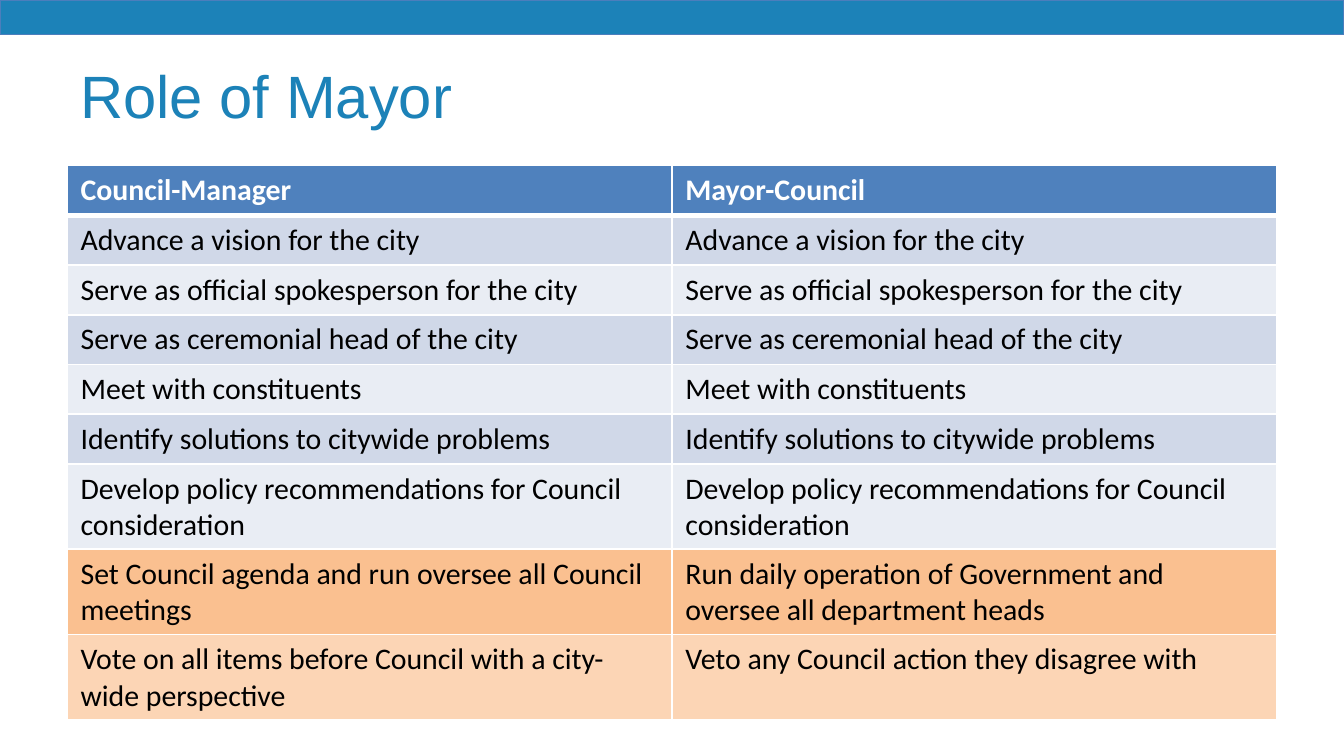
from lxml.etree import SubElement
from pptx import Presentation
from pptx.dml.color import RGBColor
from pptx.enum.shapes import MSO_SHAPE
from pptx.enum.text import MSO_ANCHOR
from pptx.oxml.ns import qn
from pptx.util import Cm, Pt

WHITE = RGBColor(0xFF, 0xFF, 0xFF)
BLACK = RGBColor(0x00, 0x00, 0x00)
TEAL = RGBColor(0x1C, 0x82, 0xB8)
BAR_EDGE = RGBColor(0x4B, 0x7E, 0xBC)
HEADER_BLUE = RGBColor(0x4F, 0x81, 0xBD)
BAND_DARK = RGBColor(0xD0, 0xD8, 0xE8)
BAND_LIGHT = RGBColor(0xE9, 0xED, 0xF4)
ORANGE_DARK = RGBColor(0xFA, 0xC0, 0x90)
ORANGE_LIGHT = RGBColor(0xFC, 0xD5, 0xB5)

HEADINGS = ("Council-Manager", "Mayor-Council")
SHARED_ROLES = (
    "Advance a vision for the city",
    "Serve as official spokesperson for the city",
    "Serve as ceremonial head of the city",
    "Meet with constituents",
    "Identify solutions to citywide problems",
    "Develop policy recommendations for Council consideration",
)
DIFFERING_ROLES = (
    ("Set Council agenda and run oversee all Council meetings",
     "Run daily operation of Government and oversee all department heads"),
    ("Vote on all items before Council with a city-wide perspective",
     "Veto any Council action they disagree with"),
)
SINGLE_LINE_ROWS = 6
SINGLE_LINE_HEIGHT = Cm(0.94)
DOUBLE_LINE_HEIGHT = Cm(1.61)


def add_text(paragraph, text, font_name, size, color, bold=False):
    run = paragraph.add_run()
    run.text = text
    run.font.name = font_name
    run.font.size = Pt(size)
    run.font.bold = bold
    run.font.color.rgb = color


def add_top_bar(slide, left, top, width, height):
    bar = slide.shapes.add_shape(MSO_SHAPE.RECTANGLE, left, top, width, height)
    bar.shadow.inherit = False
    bar.fill.solid()
    bar.fill.fore_color.rgb = TEAL
    bar.line.color.rgb = BAR_EDGE
    bar.line.width = Pt(0.75)


def add_title(slide, left, top, width, height):
    frame = slide.shapes.add_textbox(left, top, width, height).text_frame
    frame.word_wrap = True
    frame.vertical_anchor = MSO_ANCHOR.MIDDLE
    add_text(frame.paragraphs[0], "Role of Mayor", "Arial", 32, TEAL)


def set_borders(cell, top, bottom):
    """Draw white cell borders; top and bottom are widths in points."""
    properties = cell._tc.get_or_add_tcPr()
    for side, width in (("L", 1), ("R", 1), ("T", top), ("B", bottom)):
        line = SubElement(properties, qn(f"a:ln{side}"), w=str(Pt(width)))
        fill = SubElement(line, qn("a:solidFill"))
        SubElement(fill, qn("a:srgbClr"), val=str(WHITE))


def add_role_table(slide, left, top, width, height):
    rows = [HEADINGS, *((role, role) for role in SHARED_ROLES), *DIFFERING_ROLES]
    bands = [BAND_DARK, BAND_LIGHT] * (len(SHARED_ROLES) // 2)
    fills = [HEADER_BLUE, *bands, ORANGE_DARK, ORANGE_LIGHT]

    table = slide.shapes.add_table(
        len(rows), len(HEADINGS), left, top, width, height).table
    for column in table.columns:
        column.width = width // len(HEADINGS)

    for index, (texts, fill) in enumerate(zip(rows, fills)):
        is_header = index == 0
        table.rows[index].height = (
            SINGLE_LINE_HEIGHT if index < SINGLE_LINE_ROWS else DOUBLE_LINE_HEIGHT)
        for cell, text in zip(table.rows[index].cells, texts):
            set_borders(cell, top=3 if index == 1 else 1, bottom=3 if is_header else 1)
            cell.fill.solid()
            cell.fill.fore_color.rgb = fill
            add_text(cell.text_frame.paragraphs[0], text, "Calibri", 16,
                     WHITE if is_header else BLACK, bold=is_header)


def main():
    presentation = Presentation()
    presentation.slide_width = Cm(25.4)
    presentation.slide_height = Cm(14.29)
    slide = presentation.slides.add_slide(presentation.slide_layouts[6])

    margin = Cm(1.27)
    content_width = presentation.slide_width - 2 * margin
    add_top_bar(slide, 0, 0, presentation.slide_width, Cm(0.65))
    add_title(slide, margin, Cm(0.6), content_width, Cm(2.38))
    add_role_table(slide, margin, Cm(3.13), content_width, Cm(10.4))

    presentation.save("out.pptx")


if __name__ == "__main__":
    main()
